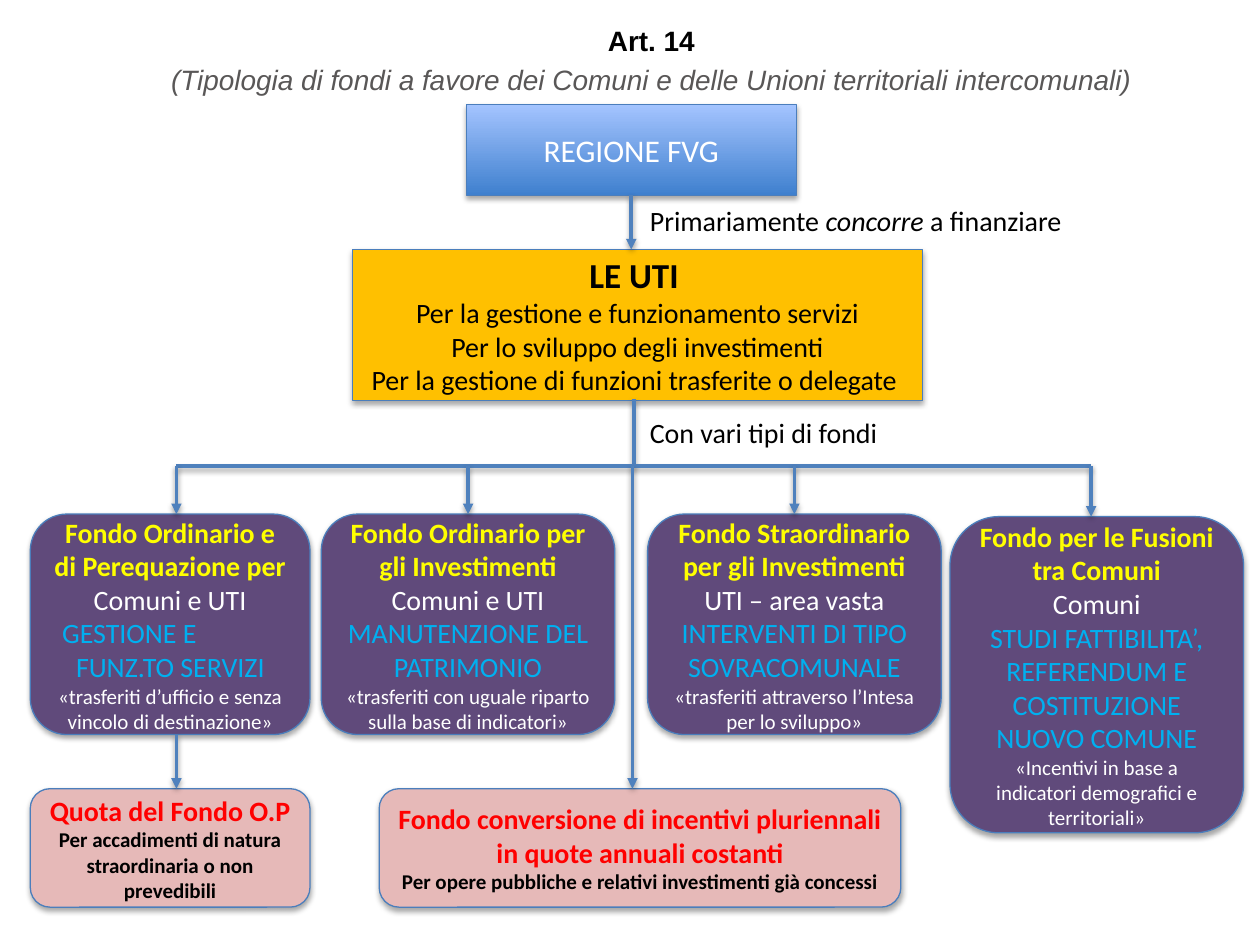
from lxml import etree
from pptx import Presentation
from pptx.dml.color import RGBColor
from pptx.enum.shapes import MSO_CONNECTOR, MSO_SHAPE
from pptx.enum.text import MSO_ANCHOR, PP_ALIGN
from pptx.oxml.ns import qn
from pptx.util import Inches, Pt

RECT, ROUND = MSO_SHAPE.RECTANGLE, MSO_SHAPE.ROUNDED_RECTANGLE
STRAIGHT = MSO_CONNECTOR.STRAIGHT
MIDDLE = MSO_ANCHOR.MIDDLE
CENTER, LEFT = PP_ALIGN.CENTER, PP_ALIGN.LEFT
TOP, BOTTOM = 0, 2
WIDTH, HEIGHT = Inches(10), Inches(7.5)
COLS, ROWS = 100, 75
BLACK, WHITE, GREY = "000000", "FFFFFF", "595757"
YELLOW, CYAN, RED = "FFFF00", "00B0F0", "FF0000"
AMBER, PURPLE, PINK = "FFC000", "604A7B", "E6B9B8"
EDGE, ARROW = "4B7EBC", "4F81BD"
BAR, FUND_TOP, LOW_TOP = 37, 40.8, 62.6


def rgb(value):
    """Turn a hex string into a colour."""
    return RGBColor.from_string(value)


def col(n):
    """Return the length of n grid columns."""
    return round(WIDTH * n / COLS)


def row(n):
    """Return the length of n grid rows."""
    return round(HEIGHT * n / ROWS)


def grid(x, y, w, h):
    """Return a frame given in columns and rows."""
    return col(x), row(y), col(w), row(h)


def run(text, size, color, bold=False, italic=False, font="Calibri"):
    """Describe one run of text."""
    return text, size, color, bold, italic, font


def add_runs(p, runs):
    """Fill a paragraph run by run, breaking lines at newlines."""
    for text, size, color, bold, italic, font in runs:
        for i, part in enumerate(text.split("\n")):
            if i:
                p.add_line_break()
            r = p.add_run()
            r.text = part
            r.font.name, r.font.size = font, Pt(size)
            r.font.bold, r.font.italic = bold, italic
            r.font.color.rgb = rgb(color)


def add_text(tf, paragraphs, align):
    """Write paragraphs, each a list of runs, into a text frame."""
    tf.word_wrap = True
    for i, runs in enumerate(paragraphs):
        p = tf.paragraphs[0] if i == 0 else tf.add_paragraph()
        p.alignment = align
        add_runs(p, runs)


def add_shadow(effects, alpha, distance):
    """Put a soft downward shadow into an effect list."""
    shadow = etree.SubElement(effects, qn("a:outerShdw"), blurRad="40000",
                              dist=str(distance), dir="5400000", rotWithShape="0")
    color = etree.SubElement(shadow, qn("a:srgbClr"), val=BLACK)
    etree.SubElement(color, qn("a:alpha"), val=str(alpha * 1000))


def add_box(s, kind, frame, fill, paragraphs):
    """Add a filled, shadowed box with centred text."""
    sp = s.shapes.add_shape(kind, *grid(*frame))
    if isinstance(fill, str):
        sp.fill.solid()
        sp.fill.fore_color.rgb = rgb(fill)
    else:
        sp.fill.gradient()
        sp.fill.gradient_angle = 90
        for stop, color in zip(sp.fill.gradient_stops, fill):
            stop.color.rgb = rgb(color)
    sp.line.color.rgb = rgb(EDGE)
    sp.line.width = Pt(0.75)
    sp.shadow.inherit = False
    add_shadow(sp._element.spPr.find(qn("a:effectLst")), 35, 23000)
    sp.text_frame.vertical_anchor = MIDDLE
    add_text(sp.text_frame, paragraphs, CENTER)
    return sp


def add_label(s, frame, paragraphs, align=LEFT):
    """Add a plain text box."""
    tf = s.shapes.add_textbox(*grid(*frame)).text_frame
    add_text(tf, paragraphs, align)
    return tf


def add_line(s, x1, y1, x2, y2, arrow=True, begin=None, end=None):
    """Add a line, joined to a box below its start or above its end."""
    cn = s.shapes.add_connector(STRAIGHT, col(x1), row(y1), col(x2), row(y2))
    if begin:
        cn.begin_connect(begin, BOTTOM)
    if end:
        cn.end_connect(end, TOP)
    cn.line.color.rgb = rgb(ARROW)
    cn.line.width = Pt(2)
    if arrow:
        etree.SubElement(cn.line._get_or_add_ln(), qn("a:tailEnd"), type="triangle")
    add_shadow(etree.SubElement(cn._element.spPr, qn("a:effectLst")), 38, 20000)


def add_fund(s, x, y, w, h, title, target, purpose, note):
    """Add a purple box that describes one fund."""
    return add_box(s, ROUND, (x, y, w, h), PURPLE, [
        [run(title, 16, YELLOW, bold=True)],
        [run(target, 16, WHITE)],
        [run(purpose, 16, CYAN)],
        [run(note, 12, WHITE)]])


def add_outcome(s, x, w, title, note):
    """Add a pink box in the bottom row."""
    return add_box(s, ROUND, (x, LOW_TOP, w, 9.4), PINK, [
        [run(title, 16, RED, bold=True)],
        [run(note, 12, BLACK, bold=True)]])


def add_top(s):
    """Add the heading, the region and the unions."""
    tf = add_label(s, (2, 1, 99.4, 7), [
        [run("Art. 14", 16, BLACK, bold=True, font="Arial")],
        [run("(Tipologia di fondi a favore dei Comuni e delle Unioni territoriali "
             "intercomunali)", 16, GREY, italic=True, font="Arial")]], CENTER)
    for p in tf.paragraphs:
        p.line_spacing = 1.15
    region = add_box(s, RECT, (37, 8.3, 26.2, 7.2), ("3F80CE", "A4C4FF"),
                     [[run("REGIONE FVG", 18, WHITE)]])
    add_label(s, (50.6, 15.7, 48.3, 3.7), [[
        run("Primariamente ", 16, BLACK),
        run("concorre", 16, BLACK, italic=True),
        run(" a finanziare", 16, BLACK)]])
    add_box(s, RECT, (28, 19.8, 45.2, 12), AMBER, [
        [run("LE UTI", 20, BLACK, bold=True), run(" ", 18, BLACK)],
        [run("Per la gestione e funzionamento servizi", 16, BLACK)],
        [run("Per lo sviluppo degli investimenti", 16, BLACK)],
        [run("Per la gestione di funzioni trasferite o delegate ", 16, BLACK)]])
    add_line(s, 50.1, 15.5, 50.1, 19.8, begin=region)
    add_label(s, (50.6, 32.5, 29.4, 3.7), [[run("Con vari tipi di fondi", 16, BLACK)]])


def add_funds(s):
    """Add the four funds, the two outcomes and the lines between them."""
    ordinary = add_fund(
        s, 2.4, FUND_TOP, 22.2, 17.5, "Fondo Ordinario e di Perequazione per",
        "Comuni e UTI", "GESTIONE E\nFUNZ.TO SERVIZI",
        "«trasferiti d’ufficio e senza vincolo di destinazione»")
    purpose = ordinary.text_frame.paragraphs[2]
    purpose.alignment = LEFT
    pPr = purpose._p.get_or_add_pPr()
    pPr.set("marL", str(col(1.8)))
    pPr.set("indent", str(col(-1.1)))
    investment = add_fund(
        s, 25.5, FUND_TOP, 23.3, 17.5, "Fondo Ordinario per gli Investimenti",
        "Comuni e UTI", "MANUTENZIONE DEL PATRIMONIO",
        "«trasferiti con uguale riparto sulla base di indicatori»")
    special = add_fund(
        s, 51.4, FUND_TOP, 23.3, 17.5, "Fondo Straordinario per gli Investimenti",
        "UTI – area vasta", "INTERVENTI DI TIPO SOVRACOMUNALE",
        "«trasferiti attraverso l’Intesa per lo sviluppo»")
    add_fund(
        s, 75.4, 41, 23.3, 25.1, "Fondo per le Fusioni tra Comuni",
        "Comuni", "STUDI FATTIBILITA’, REFERENDUM E COSTITUZIONE NUOVO COMUNE",
        "«Incentivi in base a indicatori demografici e territoriali»")
    add_outcome(s, 2.4, 22.2, "Quota del Fondo O.P",
                "Per accadimenti di natura straordinaria o non prevedibili")
    add_outcome(s, 30.1, 41.4,
                "Fondo conversione di incentivi pluriennali in quote annuali costanti",
                "Per opere pubbliche e relativi investimenti già concessi")
    add_line(s, 50.3, 31.7, 50.3, BAR, arrow=False)
    add_line(s, 14, BAR, 86.6, BAR, arrow=False)
    for x, bottom, fund in ((14, FUND_TOP, None), (37.15, FUND_TOP, investment),
                            (63.05, FUND_TOP, special), (86.6, 41, None)):
        add_line(s, x, BAR, x, bottom, end=fund)
    add_line(s, 14, 58.3, 14, LOW_TOP)
    add_line(s, 50.2, BAR, 50.2, LOW_TOP)


def main():
    """Build the slide and save it."""
    prs = Presentation()
    prs.slide_width, prs.slide_height = WIDTH, HEIGHT
    s = prs.slides.add_slide(prs.slide_layouts[6])
    add_top(s)
    add_funds(s)
    prs.save("out.pptx")


if __name__ == "__main__":
    main()
